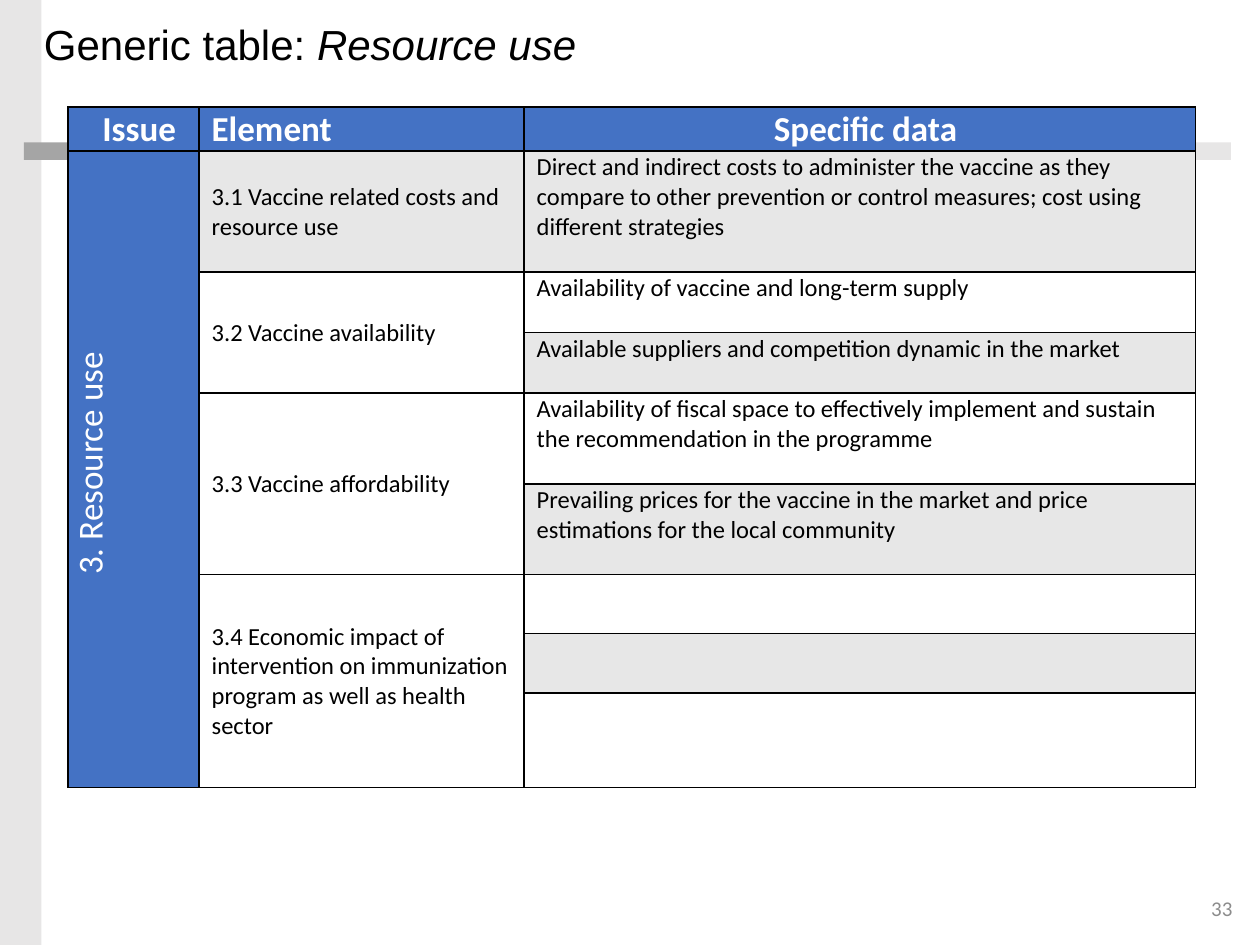
from lxml import etree
from pptx import Presentation
from pptx import util as u
from pptx.dml import color
from pptx.enum import shapes, text
from pptx.oxml import ns

BLUE, GREY, BAND, WHITE, BLACK = "4472C4", "E7E6E6", "E7E7E7", "FFFFFF", "000000"
LEFT, CENTER, RIGHT = text.PP_ALIGN.LEFT, text.PP_ALIGN.CENTER, text.PP_ALIGN.RIGHT
MIDDLE, TOP = text.MSO_ANCHOR.MIDDLE, text.MSO_ANCHOR.TOP

HEADERS = [("Issue", CENTER), ("Element", LEFT), ("Specific data", CENTER)]
ISSUE = "3. Resource use"
ELEMENTS = [
    ("3.1 Vaccine related costs and resource use", [
        "Direct and indirect costs to administer the vaccine as they compare to other "
        "prevention or control measures; cost using different strategies"]),
    ("3.2 Vaccine availability", [
        "Availability of vaccine and long-term supply",
        "Available suppliers and competition dynamic in the market"]),
    ("3.3 Vaccine affordability", [
        "Availability of fiscal space to effectively implement and sustain "
        "the recommendation in the programme",
        "Prevailing prices for the vaccine in the market and price estimations "
        "for the local community"]),
    ("3.4 Economic impact of intervention on immunization program as well as health sector",
     ["", "", ""]),
]
COLUMN_WIDTHS = [1.04, 2.58, 5.33]
ROW_HEIGHTS = [0.35, 0.96, 0.48, 0.48, 0.72, 0.72, 0.47, 0.47, 0.75]


def rgb(value):
    return color.RGBColor.from_string(value)


class SlideBuilder:
    font = "Calibri"

    def __init__(self, slide):
        self.slide = slide

    def bar(self, left, top, width, height, fill):
        box = self.slide.shapes.add_shape(
            shapes.MSO_SHAPE.RECTANGLE, *map(u.Inches, (left, top, width, height)))
        box.shadow.inherit = False
        box.fill.solid()
        box.fill.fore_color.rgb = rgb(fill)
        box.line.fill.background()

    def style(self, para, size, ink, align=LEFT, bold=False, font=None):
        para.alignment = align
        para.font.name = font or self.font
        para.font.size = u.Pt(size)
        para.font.bold = bold
        para.font.color.rgb = rgb(ink)

    def label(self, left, top, width, height, spans, size, ink, align=LEFT, font=None):
        box = self.slide.shapes.add_textbox(*map(u.Inches, (left, top, width, height)))
        frame = box.text_frame
        frame.word_wrap = True
        frame.vertical_anchor = MIDDLE
        para = frame.paragraphs[0]
        self.style(para, size, ink, align, font=font)
        for words, italic in spans:
            span = para.add_run()
            span.text = words
            if italic:
                span.font.italic = True
        return para

    def table(self, left, top, widths, heights):
        frame = self.slide.shapes.add_table(
            len(heights), len(widths), u.Inches(left), u.Inches(top),
            u.Inches(sum(widths)), u.Inches(sum(heights)))
        grid = frame.table
        for column, width in zip(grid.columns, widths):
            column.width = u.Inches(width)
        for row, height in zip(grid.rows, heights):
            row.height = u.Inches(height)
        for row in grid.rows:
            for cell in row.cells:
                self.border(cell)
        return grid

    def border(self, cell):
        properties = cell._tc.get_or_add_tcPr()
        for index, side in enumerate(("lnL", "lnR", "lnT", "lnB")):
            line = etree.Element(ns.qn(f"a:{side}"), w=str(u.Pt(1)))
            fill = etree.SubElement(line, ns.qn("a:solidFill"))
            etree.SubElement(fill, ns.qn("a:srgbClr"), val=BLACK)
            properties.insert(index, line)

    def cell(self, cell, words, fill, size=14, ink=BLACK, align=LEFT, bold=False, anchor=MIDDLE):
        cell.fill.solid()
        cell.fill.fore_color.rgb = rgb(fill)
        cell.vertical_anchor = anchor
        cell.margin_left = u.Inches(0.1)
        cell.margin_top = cell.margin_right = u.Inches(0.01)
        cell.margin_bottom = 0
        cell.text = words
        self.style(cell.text_frame.paragraphs[0], size, ink, align, bold)


def main():
    deck = Presentation()
    deck.slide_width, deck.slide_height = u.Inches(10), u.Inches(7.5)
    page = SlideBuilder(deck.slides.add_slide(deck.slide_layouts[6]))

    page.bar(0, 0, 0.33, 7.5, GREY)
    page.bar(0.19, 1.13, 0.96, 0.14, "A5A5A5")
    page.bar(1.21, 1.13, 8.56, 0.14, GREY)
    page.label(9.33, 7.01, 0.55, 0.4, [("33", False)], 12, "8C8C8C", RIGHT)
    title = page.label(0.25, -0.08, 9.75, 0.91,
                       [("Generic table: ", False), ("Resource use", True)],
                       24, BLACK, font="Arial")
    title.line_spacing = 0.9

    grid = page.table(0.54, 0.85, COLUMN_WIDTHS, ROW_HEIGHTS)
    for column, (words, align) in enumerate(HEADERS):
        page.cell(grid.cell(0, column), words, BLUE, 20, WHITE, align, bold=True)

    issue = grid.cell(1, 0)
    issue.merge(grid.cell(len(ROW_HEIGHTS) - 1, 0))
    page.cell(issue, ISSUE, BLUE, 20, WHITE, CENTER)
    issue._tc.get_or_add_tcPr().set("vert", "vert270")

    row = 1
    for element, details in ELEMENTS:
        first = grid.cell(row, 1)
        if len(details) > 1:
            first.merge(grid.cell(row + len(details) - 1, 1))
        page.cell(first, element, BAND if row == 1 else WHITE)
        for detail in details:
            page.cell(grid.cell(row, 2), detail, BAND if row % 2 else WHITE, anchor=TOP)
            row += 1

    deck.save("out.pptx")


if __name__ == "__main__":
    main()
